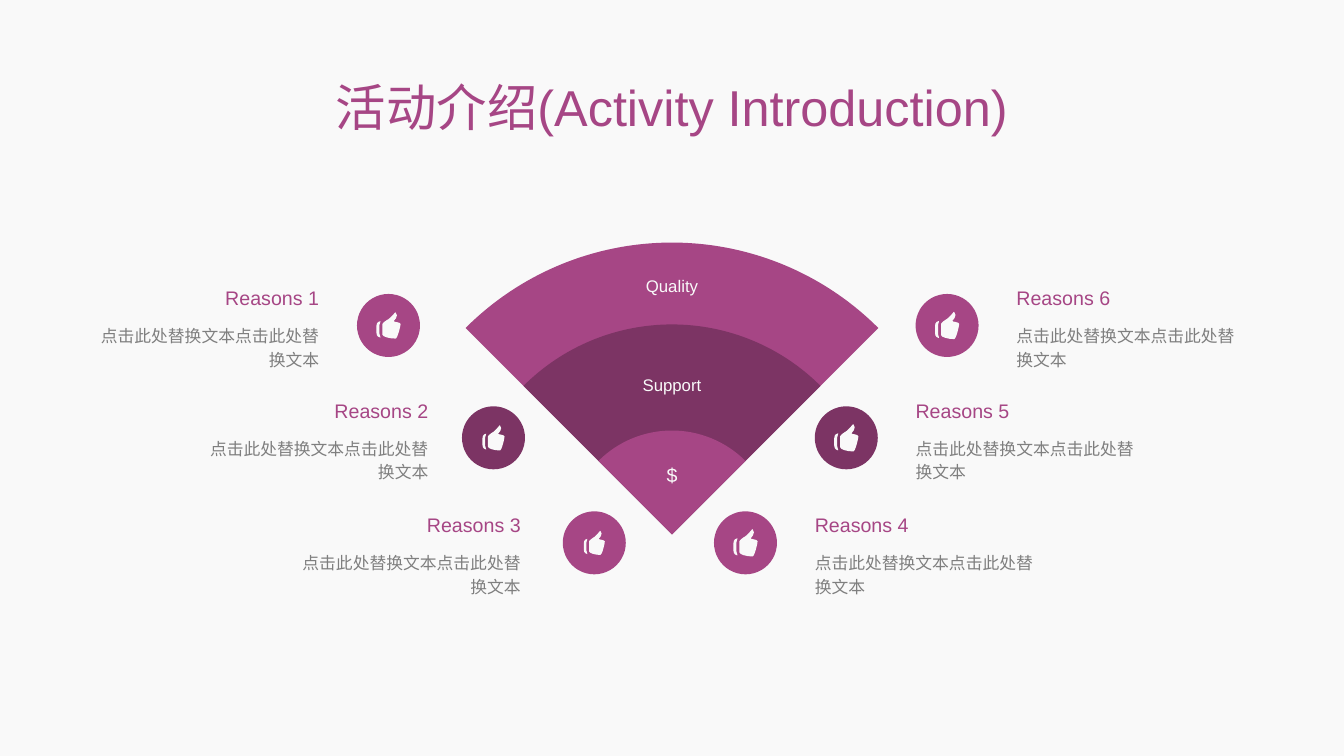
import math

from pptx import Presentation
from pptx import util as u
from pptx.dml.color import RGBColor
from pptx.enum import shapes, text
from pptx.oxml import ns, xmlchemy

PX = 9525
PINK, PLUM, PALE, GREY = "A64685", "7C3464", "F9F9F9", "7F7F7F"
BODY = "点击此处替换文本点击此处替换文本"
LEFT, CENTER, RIGHT = text.PP_ALIGN.LEFT, text.PP_ALIGN.CENTER, text.PP_ALIGN.RIGHT

THUMB_WIDTH, THUMB_HEIGHT = 24, 27
THUMB = [
    [[(4, 9)], [(3, 9), (0, 10), (0, 14)], [(0, 21)], [(0, 25), (3, 26), (4, 26)],
     [(5, 26), (3, 25), (3, 22)], [(3, 13)], [(3, 10), (5, 9), (4, 9)]],
    [[(17, 9)], [(17, 9), (23, 4), (19, 0)], [(19, -1), (16, 4), (12, 7)],
     [(10, 8), (6, 11), (6, 12)], [(6, 23)], [(6, 25), (13, 27), (19, 27)],
     [(21, 27), (24, 14), (24, 12)], [(24, 10), (17, 10), (17, 9)]],
]


def color(value):
    return RGBColor.from_string(value)


def paint(shape, fill):
    shape.shadow.inherit = False
    shape.fill.solid()
    shape.fill.fore_color.rgb = color(fill)
    shape.line.fill.background()


def add_text(slide, box, words, size, fill, align, spacing=0.9, middle=False, before=10):
    frame = slide.shapes.add_textbox(*(value * PX for value in box)).text_frame
    frame.word_wrap = True
    frame.margin_left = frame.margin_right = frame.margin_top = frame.margin_bottom = 0
    frame.vertical_anchor = text.MSO_ANCHOR.MIDDLE if middle else text.MSO_ANCHOR.TOP
    frame.text = words
    paragraph = frame.paragraphs[0]
    paragraph.alignment = align
    paragraph.line_spacing = spacing
    paragraph.space_before = u.Pt(before)
    font = paragraph.runs[0].font
    font.name = "Arial"
    font.size = u.Pt(size)
    font.color.rgb = color(fill)


def bend(line, controls, shape):
    curve = xmlchemy.OxmlElement("a:cubicBezTo")
    for x, y in controls:
        point = xmlchemy.OxmlElement("a:pt")
        point.set("x", str(x - shape.left))
        point.set("y", str(y - shape.top))
        curve.append(point)
    line.getparent().replace(line, curve)


def add_outline(slide, contours, fill):
    contours = [[[(round(x * PX), round(y * PX)) for x, y in segment]
                 for segment in contour] for contour in contours]
    builder = slide.shapes.build_freeform(*contours[0][0][0])
    for index, contour in enumerate(contours):
        if index:
            builder.move_to(*contour[0][0])
        builder.add_line_segments([segment[-1] for segment in contour[1:]], close=True)
    shape = builder.convert_to_shape()
    segments = [segment for contour in contours for segment in contour[1:]]
    lines = list(shape.element.iter(ns.qn("a:lnTo")))
    for line, segment in zip(lines, segments):
        if len(segment) == 3:
            bend(line, segment, shape)
    paint(shape, fill)


def draw_thumb(slide, left, top, width, height):
    contours = [[[(left + x * width / THUMB_WIDTH, top + y * height / THUMB_HEIGHT)
                  for x, y in segment] for segment in contour] for contour in THUMB]
    add_outline(slide, contours, PALE)


def draw_badge(slide, left, top, fill, thumb_size):
    diameter = 60
    circle = slide.shapes.add_shape(
        shapes.MSO_SHAPE.OVAL, left * PX, top * PX, diameter * PX, diameter * PX)
    paint(circle, fill)
    width, height = thumb_size
    draw_thumb(slide, left + (diameter - width) / 2, top + (diameter - height) / 2,
               width, height)


def draw_reason(slide, edge, top, heading, align):
    def start(width):
        return edge - width if align == RIGHT else edge

    add_text(slide, (start(200), top, 200, 31), heading, 14, PINK, align)
    add_text(slide, (start(222), top + 32, 222, 61), BODY, 12, GREY, align, u.Pt(17))


def draw_sector(slide, apex_x, apex_y, radius, fill):
    corner = radius * math.sqrt(0.5)
    handle = radius * 4 / 3 * math.tan(math.pi / 16)
    slant = handle * math.sqrt(0.5)
    top = apex_y - radius
    left, right, shoulder = apex_x - corner, apex_x + corner, apex_y - corner
    add_outline(slide, [[
        [(apex_x, apex_y)],
        [(left, shoulder)],
        [(left + slant, shoulder - slant), (apex_x - handle, top), (apex_x, top)],
        [(apex_x + handle, top), (right - slant, shoulder - slant), (right, shoulder)],
    ]], fill)


def draw_fan(slide, apex_x, apex_y):
    sectors = [(278, PINK, "Quality", 12, 235), (200, PLUM, "Support", 12, 141),
               (99, PINK, "$", 14, 55)]
    for radius, fill, label, size, rise in sectors:
        draw_sector(slide, apex_x, apex_y, radius, fill)
        add_text(slide, (apex_x - 80, apex_y - rise - 16, 160, 31),
                 label, size, PALE, CENTER, middle=True)


def draw_reasons(slide):
    rows = [
        (275, 280, PINK, 304, 340, (23, 25)),
        (382, 387, PLUM, 408, 440, (21, 24)),
        (491, 487, PINK, 496, 536, (20, 23)),
    ]
    for row, (top, badge_top, fill, edge, badge_left, thumb_size) in enumerate(rows):
        right_badge = 872 - 96 * row
        draw_reason(slide, edge, top, f"Reasons {row + 1}", RIGHT)
        draw_badge(slide, badge_left, badge_top, fill, thumb_size)
        draw_reason(slide, right_badge + 96, top, f"Reasons {6 - row}", LEFT)
        draw_badge(slide, right_badge, badge_top, fill, (23, 26))


def main():
    presentation = Presentation()
    presentation.slide_width, presentation.slide_height = 1280 * PX, 720 * PX
    slide = presentation.slides.add_slide(presentation.slide_layouts[6])
    slide.background.fill.solid()
    slide.background.fill.fore_color.rgb = color(PALE)
    add_text(slide, (160, 70, 960, 57), "活动介绍(Activity Introduction)", 36, PINK,
             CENTER, u.Pt(48), middle=True, before=0)
    draw_fan(slide, 640, 509)
    draw_reasons(slide)
    presentation.save("out.pptx")


if __name__ == "__main__":
    main()
